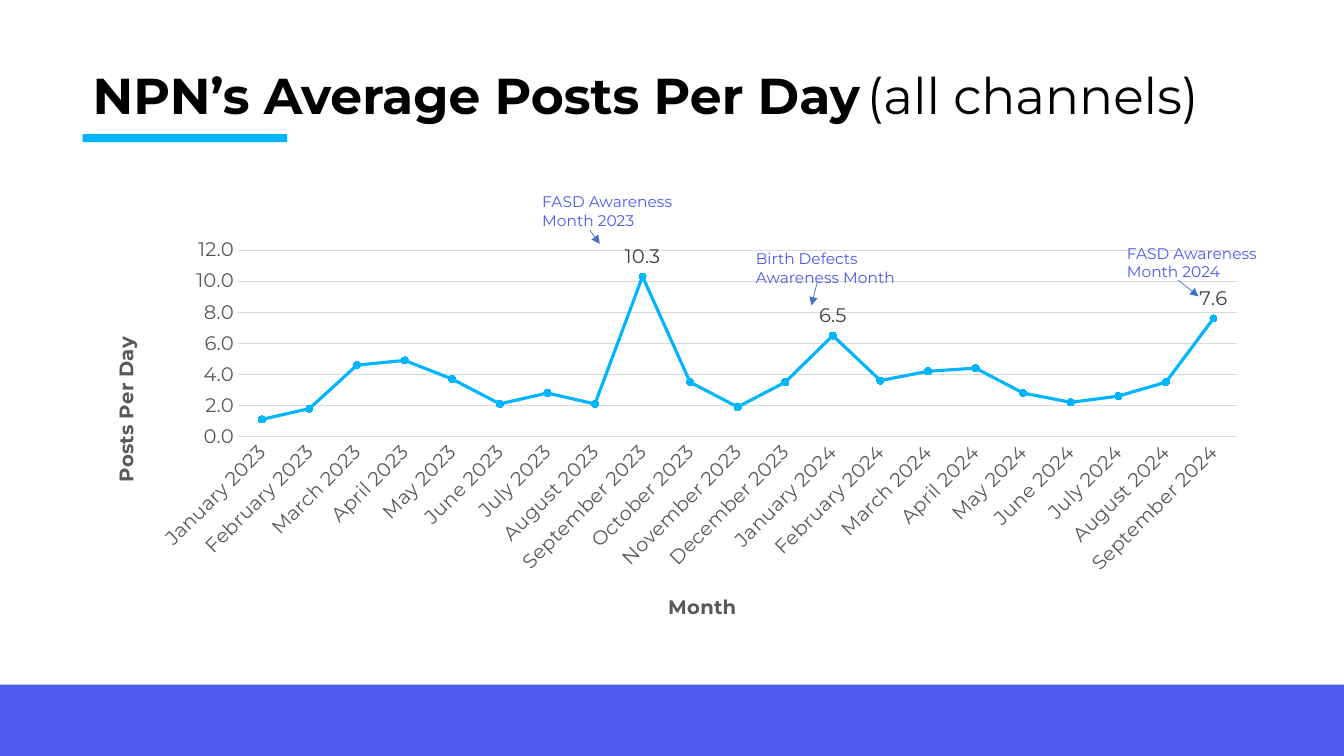
import pptx
import pptx.chart.data
import pptx.dml.color
import pptx.enum.chart
import pptx.enum.shapes
import pptx.enum.text
import pptx.oxml
import pptx.oxml.ns
import pptx.util

Pt = pptx.util.Pt
RGBColor = pptx.dml.color.RGBColor
qn = pptx.oxml.ns.qn

FONT = "Montserrat"
BLACK = RGBColor(0x00, 0x00, 0x00)
INDIGO = RGBColor(0x4E, 0x58, 0xEC)
CYAN = RGBColor(0x00, 0xB5, 0xFF)
ARROW_BLUE = RGBColor(0x44, 0x72, 0xC4)
AXIS_GRAY = RGBColor(0x59, 0x59, 0x59)
LABEL_GRAY = RGBColor(0x40, 0x40, 0x40)
GRID_GRAY = RGBColor(0xD9, 0xD9, 0xD9)

MONTH_NAMES = ["January", "February", "March", "April", "May", "June", "July",
               "August", "September", "October", "November", "December"]
MONTHS = [f"{name} {year}" for year in (2023, 2024) for name in MONTH_NAMES][:21]
POSTS = [1.1, 1.8, 4.6, 4.9, 3.7, 2.1, 2.8, 2.1, 10.3, 3.5, 1.9, 3.5,
         6.5, 3.6, 4.2, 4.4, 2.8, 2.2, 2.6, 3.5, 7.6]
PEAKS = ["September 2023", "January 2024", "September 2024"]

# Text, box left and top, arrow start and end
CALLOUTS = [
    ("FASD Awareness Month 2023", 380.2, 133.9, (421.2, 164.2), (428.4, 174.2)),
    ("FASD Awareness Month 2024", 797.8, 170.6, (841.7, 200.2), (856.1, 211.7)),
    ("Birth Defects Awareness Month", 532.8, 174.5, (583.9, 200.9), (579.6, 218.2)),
]


def style_font(font, size, color, bold=False):
    font.name = FONT
    font.size = Pt(size)
    font.bold = bold
    font.color.rgb = color


def add_bar(s, left, top, width, height, color):
    sp = s.shapes.add_shape(pptx.enum.shapes.MSO_SHAPE.RECTANGLE,
                            Pt(left), Pt(top), Pt(width), Pt(height))
    sp.shadow.inherit = False
    sp.fill.solid()
    sp.fill.fore_color.rgb = color
    sp.line.fill.background()


def set_title(s):
    sp = s.shapes.title
    sp.left, sp.top, sp.width, sp.height = Pt(59), Pt(44.6), Pt(841.7), Pt(51.1)
    tf = sp.text_frame
    tf.auto_size = pptx.enum.text.MSO_AUTO_SIZE.NONE
    tf.vertical_anchor = pptx.enum.text.MSO_ANCHOR.MIDDLE
    p = tf.paragraphs[0]
    p.alignment = pptx.enum.text.PP_ALIGN.LEFT
    p.line_spacing = 0.9
    for text, size, bold in [("NPN’s Average Posts Per Day", 36, True),
                             (" ", 18, False), ("(all channels)", 36, False)]:
        r = p.add_run()
        r.text = text
        style_font(r.font, size, BLACK, bold)


def make_layout(x, y, w=None, h=None):
    """Return a manual layout, in fractions of the chart."""
    layout = pptx.oxml.parse_xml(
        '<c:layout xmlns:c="http://schemas.openxmlformats.org/drawingml/2006/chart">'
        '<c:manualLayout/></c:layout>')
    entries = [("xMode", "edge"), ("yMode", "edge"), ("x", x), ("y", y)]
    if w:
        entries = [("layoutTarget", "inner")] + entries + [("w", w), ("h", h)]
    for tag, value in entries:
        layout[0].makeelement(qn("c:" + tag))
        child = layout[0].makeelement(qn("c:" + tag), {"val": str(value)})
        layout[0].append(child)
    return layout


def place(parent, index, layout):
    for old in parent.findall(qn("c:layout")):
        parent.remove(old)
    parent.insert(index, layout)


def style_axis(axis, title, x, y):
    axis.major_tick_mark = axis.minor_tick_mark = pptx.enum.chart.XL_TICK_MARK.NONE
    style_font(axis.tick_labels.font, 14, AXIS_GRAY)
    tf = axis.axis_title.text_frame
    tf.text = title
    style_font(tf.paragraphs[0].runs[0].font, 14, AXIS_GRAY, True)
    place(tf._txBody.getparent().getparent(), 1, make_layout(x, y))


def style_line(line, color, width):
    line.color.rgb = color
    line.width = Pt(width)


def add_posts_chart(s):
    data = pptx.chart.data.CategoryChartData(number_format="0.0")
    data.categories = MONTHS
    data.add_series("Series 1", POSTS)
    chart = s.shapes.add_chart(pptx.enum.chart.XL_CHART_TYPE.LINE_MARKERS,
                               Pt(59), Pt(164.2), Pt(841.7), Pt(308.2), data).chart
    chart.has_legend = False
    chart.has_title = False
    style_font(chart.font, 14, BLACK)
    plot = chart.plots[0]
    plot.vary_by_categories = False
    place(plot._element.getparent(), 0, make_layout(0.132, 0.047, 0.848, 0.432))

    # Axes
    months, posts = chart.category_axis, chart.value_axis
    style_axis(months, "Month", 0.494, 0.835)
    style_line(months.format.line, GRID_GRAY, 0.75)
    months._element.find(qn("c:txPr")).find(qn("a:bodyPr")).set("rot", "-2700000")
    style_axis(posts, "Posts Per Day", 0.022, 0.24)
    posts.format.line.fill.background()
    posts.minimum_scale, posts.maximum_scale, posts.major_unit = 0, 12, 2
    posts.tick_labels.number_format = "0.0"
    posts.tick_labels.number_format_is_linked = False
    posts.has_major_gridlines = True
    style_line(posts.major_gridlines.format.line, GRID_GRAY, 0.75)

    # Line, markers and peak labels
    series = plot.series[0]
    series.smooth = False
    style_line(series.format.line, CYAN, 2.25)
    series.marker.style = pptx.enum.chart.XL_MARKER_STYLE.CIRCLE
    series.marker.size = 5
    series.marker.format.fill.solid()
    series.marker.format.fill.fore_color.rgb = CYAN
    series.marker.format.line.color.rgb = CYAN
    series.data_labels.show_value = False
    for month in PEAKS:
        label = series.points[MONTHS.index(month)].data_label
        style_font(label.font, 14, LABEL_GRAY)
        label.position = pptx.enum.chart.XL_LABEL_POSITION.ABOVE


def add_callout(s, text, left, top, start, end):
    tf = s.shapes.add_textbox(Pt(left), Pt(top), Pt(115.9), Pt(37.4)).text_frame
    tf.word_wrap = True
    tf.text = text
    style_font(tf.paragraphs[0].runs[0].font, 11, INDIGO)
    arrow = s.shapes.add_connector(pptx.enum.shapes.MSO_CONNECTOR.STRAIGHT,
                                   *[Pt(v) for v in start + end])
    style_line(arrow.line, ARROW_BLUE, 0.5)
    ln = arrow.line._get_or_add_ln()
    ln.append(ln.makeelement(qn("a:tailEnd"), {"type": "triangle"}))
    sp_pr = arrow._element.spPr
    sp_pr.append(sp_pr.makeelement(qn("a:effectLst")))


def main():
    prs = pptx.Presentation()
    prs.slide_width, prs.slide_height = Pt(960), Pt(540)
    s = prs.slides.add_slide(prs.slide_layouts[5])

    # Footer band, title and its underline
    add_bar(s, 0, 489, 960, 51, INDIGO)
    add_bar(s, 59, 95.8, 146.2, 5.8, CYAN)
    set_title(s)

    # Chart and callouts
    add_posts_chart(s)
    for callout in CALLOUTS:
        add_callout(s, *callout)

    prs.save("out.pptx")


if __name__ == "__main__":
    main()
